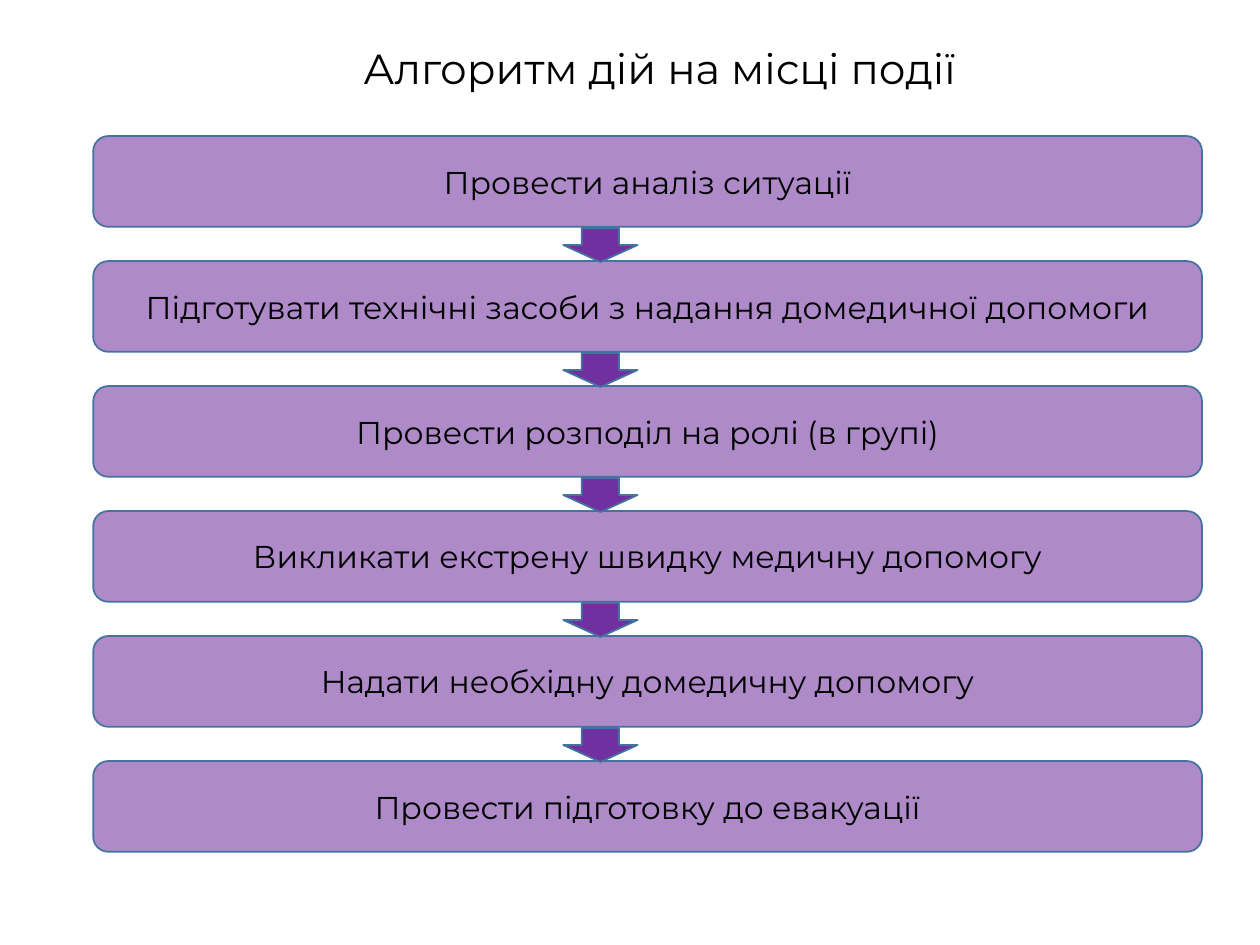
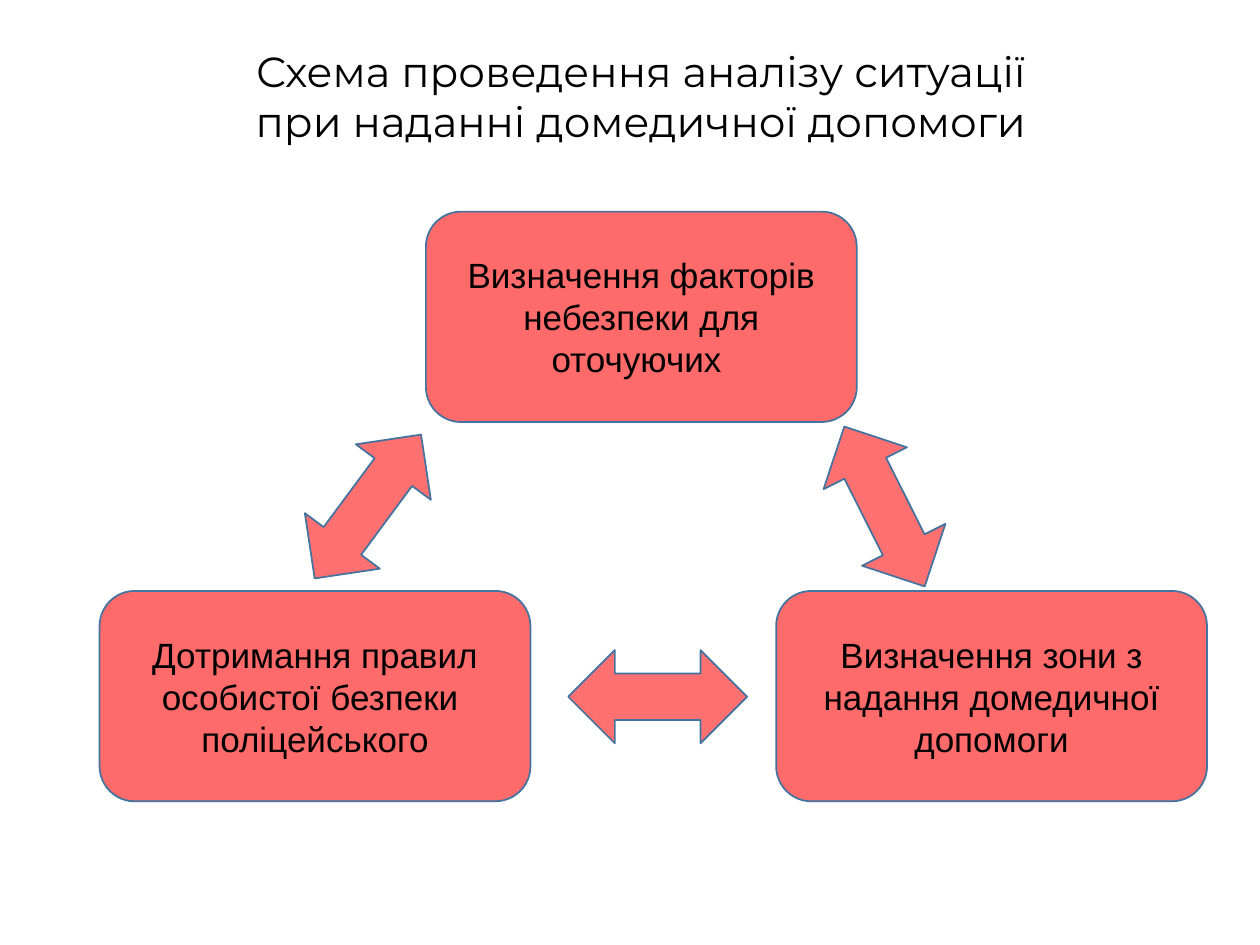
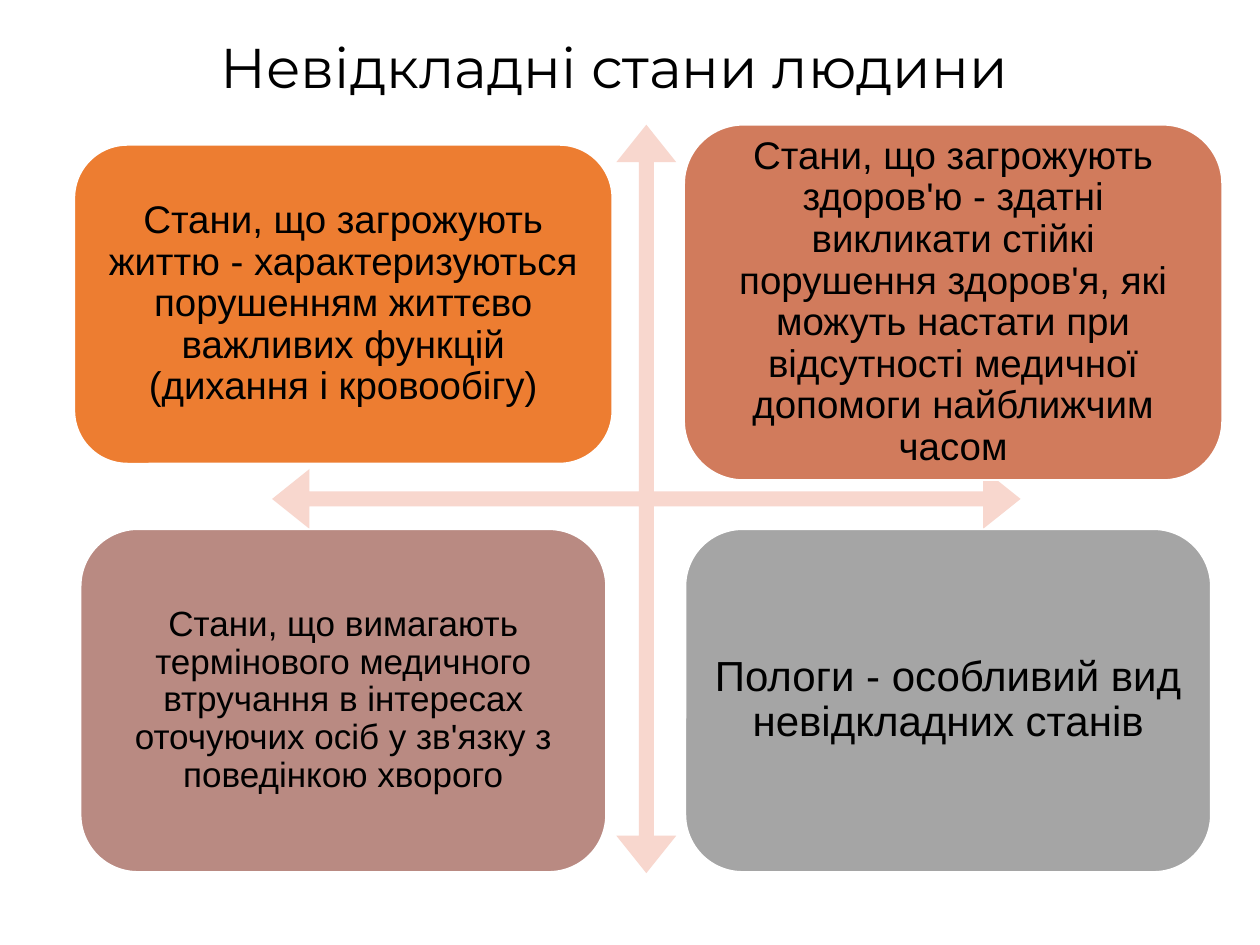
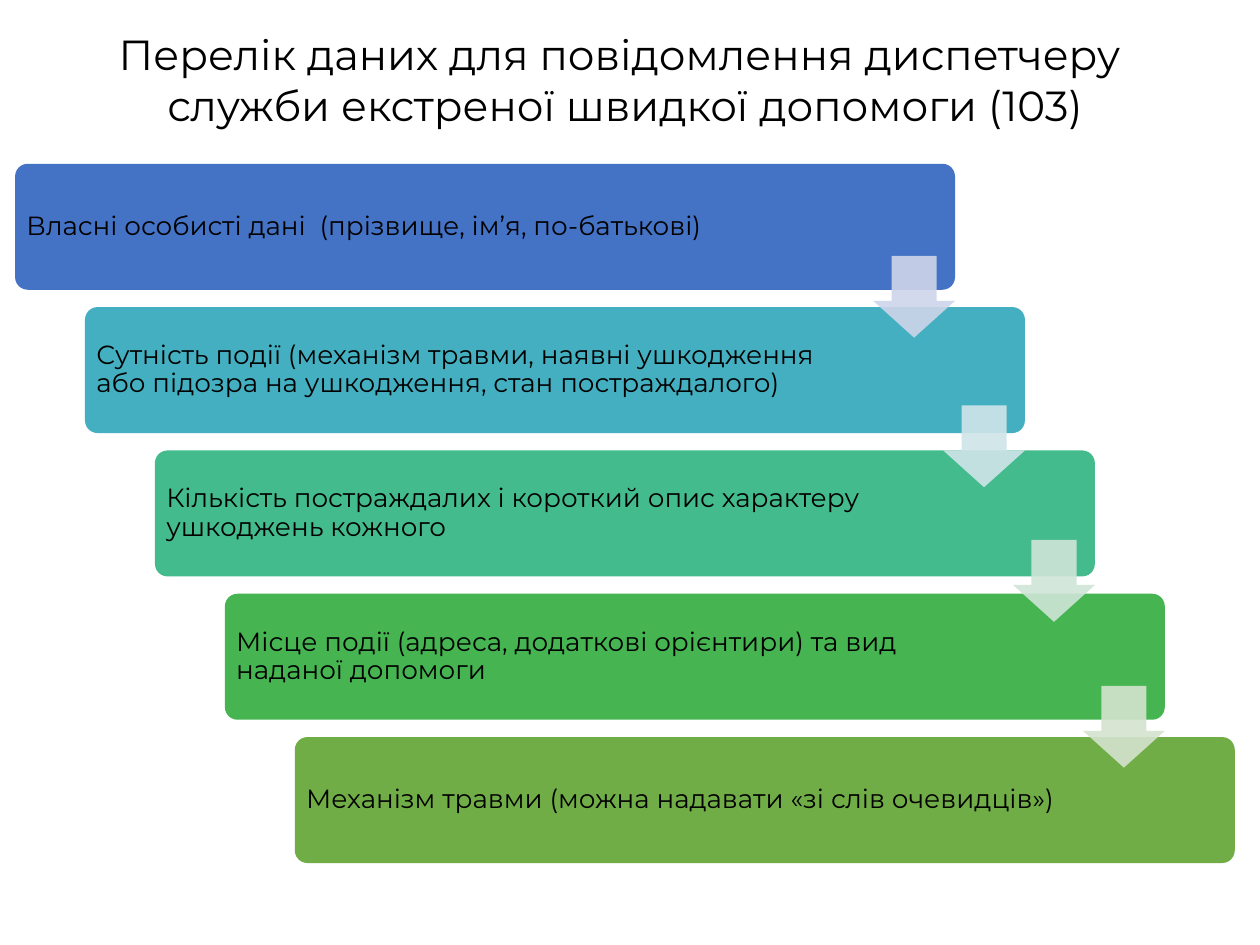
from lxml import etree
from pptx import Presentation
from pptx.dml.color import RGBColor
from pptx.enum.shapes import MSO_SHAPE
from pptx.enum.text import MSO_ANCHOR, MSO_AUTO_SIZE, PP_ALIGN
from pptx.oxml.ns import qn
from pptx.util import Inches, Pt

TITLE_FONT = "Montserrat"
BODY_FONT = "Arial"
BLACK = "000000"
WHITE = "FFFFFF"
OUTLINE = "43739E"
PURPLE = "7030A0"
RED = "FF0000"


def color(value):
    return RGBColor.from_string(value)


def write(shape, text, size=18, font=BODY_FONT, align=PP_ALIGN.CENTER,
          anchor=MSO_ANCHOR.MIDDLE, wrap=True, line_spacing=None, margin=None):
    frame = shape.text_frame
    frame.text = text
    frame.word_wrap = wrap
    frame.vertical_anchor = anchor
    if margin is not None:
        frame.margin_left = frame.margin_right = Inches(margin)
        frame.margin_top = frame.margin_bottom = Inches(margin)
    for paragraph in frame.paragraphs:
        paragraph.alignment = align
        if line_spacing:
            paragraph.line_spacing = line_spacing
        for run in paragraph.runs:
            run.font.size = Pt(size)
            run.font.name = font
            run.font.color.rgb = color(BLACK)


def add_text(slide, box, text, **text_format):
    text_box = slide.shapes.add_textbox(*map(Inches, box))
    write(text_box, text, **text_format)
    return text_box


def add_title(slide, box, text, size=24, align=PP_ALIGN.CENTER, wrap=False):
    title = add_text(slide, box, text, size=size, font=TITLE_FONT, align=align,
                     anchor=MSO_ANCHOR.TOP, wrap=wrap)
    title.text_frame.auto_size = MSO_AUTO_SIZE.SHAPE_TO_FIT_TEXT


def add_figure(slide, kind, box, fill, opacity=100, line=None, adjustments=(), rotation=0):
    shape = slide.shapes.add_shape(kind, *map(Inches, box))
    shape.shadow.inherit = False
    shape.rotation = rotation
    for index, value in enumerate(adjustments):
        shape.adjustments[index] = value
    shape.fill.solid()
    shape.fill.fore_color.rgb = color(fill)
    if opacity < 100:
        fill_color = shape.fill._xPr.find(qn("a:solidFill"))[0]
        etree.SubElement(fill_color, qn("a:alpha"), val=str(opacity * 1000))
    if line:
        shape.line.color.rgb = color(line)
        shape.line.width = Pt(1)
    else:
        shape.line.fill.background()
    return shape


def add_smart_text(slide, box, text, size, **text_format):
    """Add closely set text whose margin grows with its size."""
    add_text(slide, box, text, size=size, margin=round(size / 240, 2),
             line_spacing=0.9, **text_format)


def add_step_column(slide, box, steps):
    """Stack equal bars in the box, with a down arrow in each gap."""
    left, top, width, height = box
    bar_height, arrow_width, arrow_height = 0.72, 0.59, 0.27
    pitch = (height - bar_height) / (len(steps) - 1)
    bar_tops = [top + index * pitch for index in range(len(steps))]
    for bar_top, step in zip(bar_tops, steps):
        bar = add_figure(slide, MSO_SHAPE.ROUNDED_RECTANGLE,
                         (left, bar_top, width, bar_height), PURPLE, 56, OUTLINE)
        write(bar, step, font=TITLE_FONT)
    for bar_top in bar_tops[:-1]:
        add_figure(slide, MSO_SHAPE.DOWN_ARROW,
                   (left + 3.73, bar_top + bar_height + 0.01, arrow_width, arrow_height),
                   PURPLE, line=OUTLINE)


def add_triangle(slide, box, factors):
    """Place one card at the top and two at the bottom, joined by double arrows."""
    left, top, width, height = box
    card_width, card_height = 3.42, 1.67
    bottom = top + height - card_height
    places = ((left + 2.59, top), (left, bottom), (left + width - card_width, bottom))
    for (card_left, card_top), factor in zip(places, factors):
        card = add_figure(slide, MSO_SHAPE.ROUNDED_RECTANGLE,
                          (card_left, card_top, card_width, card_height), RED, 58, OUTLINE)
        write(card, factor, size=20)
    for arrow_left, arrow_top, rotation in ((1.76, 1.63, 36.5), (4.06, 3.14, 90),
                                            (5.86, 1.63, 333.3)):
        add_figure(slide, MSO_SHAPE.UP_DOWN_ARROW,
                   (left + arrow_left, top + arrow_top, 0.74, 1.42),
                   RED, 56, OUTLINE, rotation=rotation)


def add_quadrants(slide, box, conditions):
    """Draw crossed arrows and a card in each quarter, placed from the corner of the box."""
    left, top, width, height = box
    add_figure(slide, MSO_SHAPE.QUAD_ARROW, (left + 1.57, top, height, height), "F8D7CE",
               adjustments=(0.02, 0.04, 0.05))
    for (card_left, card_top, card_width, card_height), fill, size, text in conditions:
        card = (left + card_left, top + card_top, card_width, card_height)
        add_figure(slide, MSO_SHAPE.ROUNDED_RECTANGLE, card, fill, line=WHITE)
        inset = 0.049 * card_height
        inner = (card[0] + inset, card[1] + inset,
                 card_width - 2 * inset, card_height - 2 * inset)
        add_smart_text(slide, inner, text, size)


def add_staircase(slide, box, stairs, arrows):
    """Step equal bars down and right across the box; arrows give colour and drop."""
    left, top, width, height = box
    bar_width, bar_height, arrow_size, inset = 7.46, 1, 0.65, 0.03
    steps = len(stairs) - 1
    places = [(left + index * (width - bar_width) / steps,
               top + index * (height - bar_height) / steps) for index in range(len(stairs))]
    for index, ((bar_left, bar_top), (fill, text)) in enumerate(zip(places, stairs)):
        add_figure(slide, MSO_SHAPE.ROUNDED_RECTANGLE,
                   (bar_left, bar_top, bar_width, bar_height), fill, adjustments=(0.1,))
        text_width = 6.19 if index else 6.27
        add_smart_text(slide, (bar_left + inset, bar_top + inset, text_width,
                               bar_height - 2 * inset),
                       text, 15, font=TITLE_FONT, align=PP_ALIGN.LEFT)
    for (bar_left, bar_top), (fill, drop) in zip(places, arrows):
        add_figure(slide, MSO_SHAPE.DOWN_ARROW,
                   (bar_left + bar_width - arrow_size, bar_top + drop, arrow_size, arrow_size),
                   fill, 90, adjustments=(0.55, 0.45))


def build_algorithm(slide):
    add_title(slide, (1.02, 0.29, 8.43, 0.5), "Алгоритм дій на місці події", wrap=True)
    add_step_column(slide, (0.74, 1.08, 8.8, 5.68), (
        "Провести аналіз ситуації",
        "Підготувати технічні засоби з надання домедичної допомоги",
        "Провести розподіл на ролі (в групі)",
        "Викликати екстрену швидку медичну допомогу",
        "Надати необхідну домедичну допомогу",
        "Провести підготовку до евакуації",
    ))


def build_analysis(slide):
    add_title(slide, (1.59, 0.31, 6.99, 0.91),
              "Схема проведення аналізу ситуації\vпри наданні домедичної допомоги")
    add_triangle(slide, (0.79, 1.68, 8.79, 4.68), (
        "Визначення факторів небезпеки для оточуючих ",
        "Дотримання правил особистої безпеки  поліцейського",
        "Визначення зони з надання домедичної допомоги",
    ))


def build_conditions(slide):
    add_title(slide, (1.65, 0.21, 7.05, 0.64), "Невідкладні стани людини", size=32,
              align=PP_ALIGN.LEFT)
    add_quadrants(slide, (0.59, 0.99, 9.11, 5.94), (
        ((0, 0.16, 4.27, 2.53), "ED7D31", 22,
         "Стани, що загрожують життю - характеризуються порушенням життєво важливих "
         "функцій (дихання і кровообігу)"),
        ((4.84, 0, 4.27, 2.82), "D17B5C", 22,
         "Стани, що загрожують здоров'ю - здатні викликати стійкі порушення здоров'я, "
         "які можуть настати при відсутності медичної допомоги найближчим часом"),
        ((0.05, 3.21, 4.17, 2.72), "B98A82", 20,
         "Стани, що вимагають термінового медичного втручання в інтересах оточуючих "
         "осіб у зв'язку з поведінкою хворого"),
        ((4.85, 3.21, 4.17, 2.72), "A5A5A5", 24,
         "Пологи - особливий вид невідкладних станів"),
    ))


def build_report(slide):
    add_title(slide, (0.49, 0.18, 8.94, 0.91),
              "Перелік даних для повідомлення диспетчеру \n"
              "служби екстреної швидкої допомоги (103)")
    stairs = (
        ("4472C4", "Власні особисті дані  (прізвище, ім’я, по-батькові)"),
        ("43AFC0", "Сутність події (механізм травми, наявні ушкодження або підозра на "
                   "ушкодження, стан постраждалого)"),
        ("43BB8D", "Кількість постраждалих і короткий опис характеру ушкоджень кожного"),
        ("45B451", "Місце події (адреса, додаткові орієнтири) та вид наданої допомоги"),
        ("70AD47", "Механізм травми (можна надавати «зі слів очевидців»)"),
    )
    arrows = (("CFD5EA", 0.73), ("CFE5E8", 0.78), ("CFE5D8", 0.71), ("D5E3CF", 0.73))
    add_staircase(slide, (0.12, 1.3, 9.68, 5.55), stairs, arrows)


def main():
    presentation = Presentation()
    presentation.slide_width = Inches(10)
    presentation.slide_height = Inches(7.5)
    blank_layout = presentation.slide_layouts[6]
    for build in (build_algorithm, build_analysis, build_conditions, build_report):
        build(presentation.slides.add_slide(blank_layout))
    presentation.save("out.pptx")


if __name__ == "__main__":
    main()
